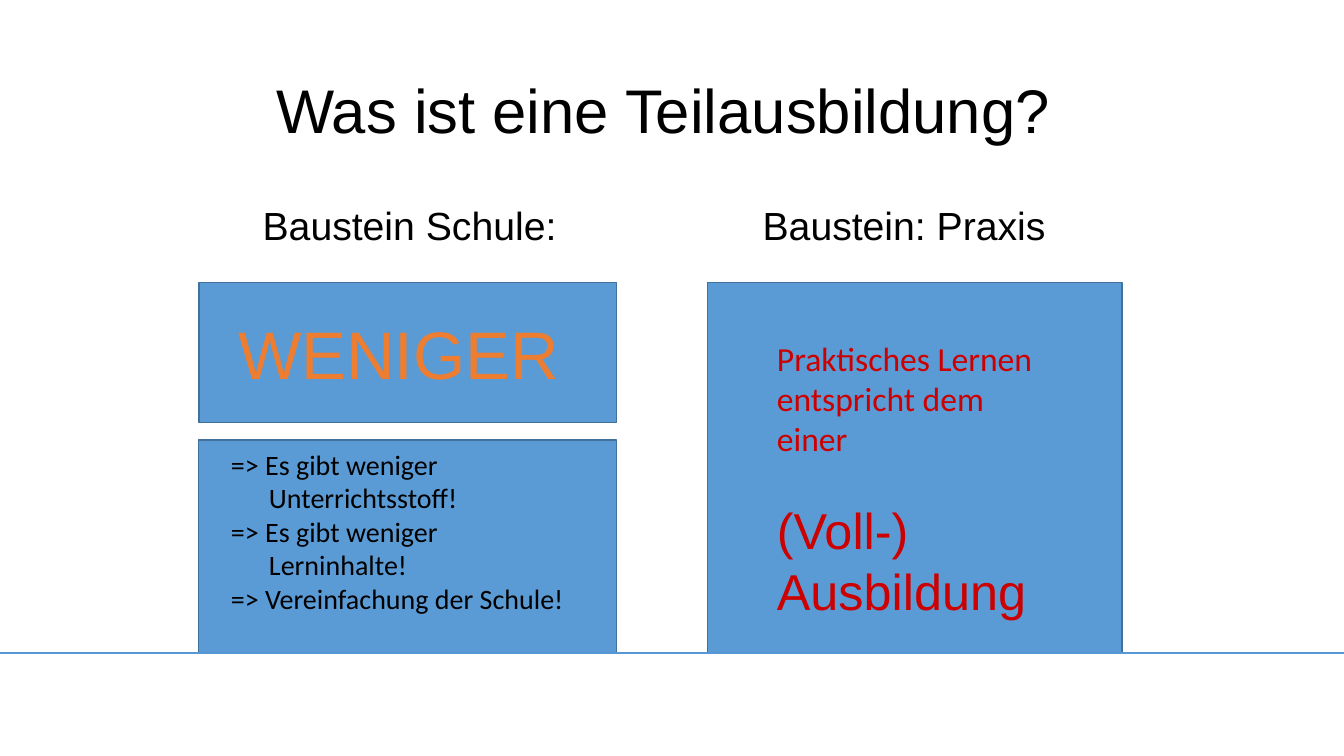
"""Builds the slide on the two building blocks of a partial apprenticeship."""
from collections import namedtuple

from lxml import etree
from pptx import Presentation
from pptx.dml.color import RGBColor
from pptx.enum.shapes import MSO_CONNECTOR, MSO_SHAPE
from pptx.enum.text import MSO_ANCHOR, PP_ALIGN
from pptx.oxml.ns import qn
from pptx.util import Cm, Pt

BLACK = RGBColor(0x00, 0x00, 0x00)
RED = RGBColor(0xCC, 0x00, 0x00)
ORANGE = RGBColor(0xED, 0x7D, 0x31)
BLUE = RGBColor(0x5B, 0x9B, 0xD5)
BLUE_EDGE = RGBColor(0x42, 0x71, 0x9B)
GROUND_BLUE = RGBColor(0x56, 0x98, 0xD3)
RECTANGLE = MSO_SHAPE.RECTANGLE
STRAIGHT = MSO_CONNECTOR.STRAIGHT
MIDDLE = MSO_ANCHOR.MIDDLE
CENTER = PP_ALIGN.CENTER
LEFT = PP_ALIGN.LEFT

PAGE_WIDTH, PAGE_HEIGHT = 33.87, 19.05
GROUND = 16.46

Box = namedtuple("Box", "left top width height")


def lengths(box):
    """Return the sides of a box in centimetres as slide lengths."""
    return [Cm(side) for side in box]


def add_para(frame, text, size, font, color, align=LEFT):
    """Write one paragraph into a frame and return it."""
    para = frame.paragraphs[0]
    if para.runs:
        para = frame.add_paragraph()
    para.alignment = align
    span = para.add_run()
    span.text = text
    span.font.size = Pt(size)
    span.font.name = font
    span.font.color.rgb = color
    return para


def add_frame(page, box):
    """Add a wrapping text box and return its text frame."""
    frame = page.shapes.add_textbox(*lengths(box)).text_frame
    frame.word_wrap = True
    return frame


def add_block(page, box):
    """Add a blue building block."""
    block = page.shapes.add_shape(RECTANGLE, *lengths(box))
    block.shadow.inherit = False
    block.fill.solid()
    block.fill.fore_color.rgb = BLUE
    block.line.color.rgb = BLUE_EDGE
    block.line.width = Pt(1)
    return block


def add_title(page, box):
    """Add the centred slide title."""
    frame = add_frame(page, box)
    frame.vertical_anchor = MIDDLE
    para = add_para(frame, "Was ist eine Teilausbildung? ", 44, "Arial", BLACK, CENTER)
    para.line_spacing = 0.9


def add_heading(page, box, text, indent):
    """Add the heading above a column."""
    frame = add_frame(page, Box(box.left + indent, box.top - 2.04, 9, 1.4))
    add_para(frame, text, 28, "Arial", BLACK).line_spacing = 0.9


def add_school(page, box):
    """Add the school column with its two blocks."""
    add_heading(page, box, "Baustein Schule:", 1.37)
    keyword_height, gap = 3.53, 0.44
    lower_top = box.top + keyword_height + gap
    lower_height = box.top + box.height - lower_top
    add_block(page, Box(box.left, lower_top, box.width, lower_height))
    frame = add_frame(page, Box(box.left + 0.57, lower_top + 0.05, 9.37, 4.29))
    points = (
        ("=> Es gibt weniger", 0),
        ("Unterrichtsstoff!", 0.96),
        ("=> Es gibt weniger", 0),
        ("Lerninhalte!", 0.96),
        ("=> Vereinfachung der Schule!", 0),
    )
    for text, indent in points:
        para = add_para(frame, text, 20, "Calibri", BLACK)
        para._p.get_or_add_pPr().set("marL", str(Cm(indent)))
    keyword = add_block(page, Box(box.left + 0.02, box.top, box.width - 0.02, keyword_height))
    keyword.text_frame.vertical_anchor = MIDDLE
    add_para(keyword.text_frame, "WENIGER ", 48, "Arial", ORANGE, CENTER)


def add_practice(page, box):
    """Add the practice column with its single block."""
    add_heading(page, box, "Baustein: Praxis", 1.14)
    add_block(page, box)
    frame = add_frame(page, Box(box.left + 1.5, box.top + 1.26, 7.9, 6.81))
    for text in ("Praktisches Lernen", "entspricht dem", "einer"):
        add_para(frame, text, 24, "Calibri", RED)
    result = add_para(frame, "(Voll-) Ausbildung", 36, "Arial", RED)
    result.space_before = Pt(29.3)


def add_ground(page, top):
    """Add the line on which the blocks stand."""
    ground = page.shapes.add_connector(STRAIGHT, 0, Cm(top), Cm(PAGE_WIDTH), Cm(top))
    ground.line.color.rgb = GROUND_BLUE
    ground.line.width = Pt(1.5)
    etree.SubElement(ground._element.spPr, qn("a:effectLst"))


def main():
    """Build and save the deck."""
    deck = Presentation()
    deck.slide_width, deck.slide_height = Cm(PAGE_WIDTH), Cm(PAGE_HEIGHT)
    page = deck.slides.add_slide(deck.slide_layouts[6])
    column_top = 7.12
    column_height = GROUND - column_top
    add_title(page, Box(2.33, 1.01, 29.21, 3.68))
    add_school(page, Box(5, column_top, 10.54, column_height))
    add_practice(page, Box(17.83, column_top, 10.45, column_height))
    add_ground(page, GROUND)
    deck.save("out.pptx")


if __name__ == "__main__":
    main()
